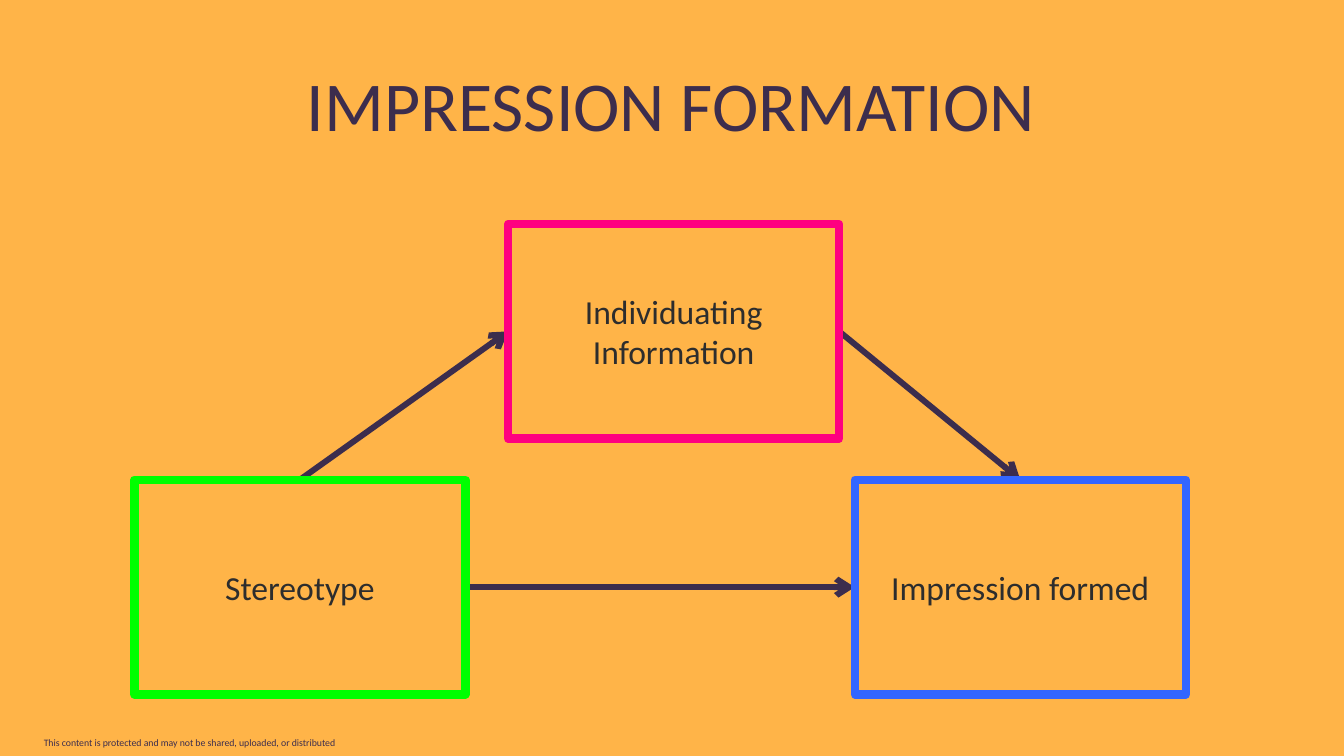
"""Build the impression formation slide: three outlined boxes joined by arrows."""
from dataclasses import dataclass

from lxml import etree
from pptx import Presentation
from pptx import util as u
from pptx.dml.color import RGBColor
from pptx.enum import shapes, text
from pptx.oxml import ns
from pptx.shapes.autoshape import Shape
from pptx.shapes.connector import Connector
from pptx.slide import Slide
from pptx.text.text import TextFrame


@dataclass(frozen=True)
class Theme:
    font: str = "Calibri"
    background: str = "FFB448"
    accent: str = "3C2D4D"
    label: str = "2D2D2D"
    title_size: float = 50
    label_size: float = 24
    notice_size: float = 7
    arrow_width: float = 4.25
    border_width: float = 6


@dataclass(frozen=True)
class Box:
    label: str
    left: float
    top: float
    border: str


@dataclass(frozen=True)
class Arrow:
    start: str
    start_site: int
    end: str
    end_site: int


THEME = Theme()
TOP, LEFT, RIGHT = 0, 1, 3
BOX_WIDTH, BOX_HEIGHT = 236.4, 153.4
LOWER_ROW = 342.7
STEREOTYPE, INFORMATION, IMPRESSION = "Stereotype", "Individuating Information", "Impression formed"
BOXES = [
    Box(STEREOTYPE, 96, LOWER_ROW, "00FF00"),
    Box(INFORMATION, 363, 160, "FF0080"),
    Box(IMPRESSION, 610.6, LOWER_ROW, "3366FF"),
]
ARROWS = [
    Arrow(INFORMATION, RIGHT, IMPRESSION, TOP),
    Arrow(STEREOTYPE, RIGHT, IMPRESSION, LEFT),
    Arrow(STEREOTYPE, TOP, INFORMATION, LEFT),
]


def write(frame: TextFrame, words: str, size: float, color: str, align: text.PP_ALIGN) -> None:
    """Put one formatted paragraph into a text frame."""
    frame.text = words
    frame.word_wrap = True
    para = frame.paragraphs[0]
    para.alignment = align
    span = para.runs[0]
    span.font.name = THEME.font
    span.font.size = u.Pt(size)
    span.font.color.rgb = RGBColor.from_string(color)


def draw_title(page: Slide) -> None:
    """Place and format the title placeholder."""
    title = page.shapes.title
    title.left, title.top, title.width, title.height = map(u.Pt, (148.3, 29.5, 662.4, 75.6))
    frame = title.text_frame
    write(frame, "IMPRESSION FORMATION", THEME.title_size, THEME.accent, text.PP_ALIGN.CENTER)
    frame.auto_size = text.MSO_AUTO_SIZE.NONE
    frame.vertical_anchor = text.MSO_ANCHOR.BOTTOM
    frame.margin_left = frame.margin_right = frame.margin_top = frame.margin_bottom = u.Pt(0)
    frame.paragraphs[0].line_spacing = 0.9


def draw_notice(page: Slide) -> None:
    """Add the small notice at the foot of the slide."""
    notice = page.shapes.add_textbox(*map(u.Pt, (24.2, 522.7, 341.3, 15.8)))
    words = "This content is protected and may not be shared, uploaded, or distributed"
    write(notice.text_frame, words, THEME.notice_size, THEME.accent, text.PP_ALIGN.LEFT)


def draw_arrow(page: Slide) -> Connector:
    """Add an arrow that is still to be joined to its boxes."""
    line = page.shapes.add_connector(shapes.MSO_CONNECTOR.STRAIGHT, *map(u.Pt, (0, 0, 0, 0)))
    line.line.color.rgb = RGBColor.from_string(THEME.accent)
    line.line.width = u.Pt(THEME.arrow_width)
    properties = line.element.spPr
    etree.SubElement(properties.find(ns.qn("a:ln")), ns.qn("a:tailEnd"), type="arrow")
    etree.SubElement(properties, ns.qn("a:effectLst"))
    return line


def draw_box(page: Slide, box: Box) -> Shape:
    """Add an outlined box with a centred label."""
    shape = page.shapes.add_shape(
        shapes.MSO_SHAPE.RECTANGLE, *map(u.Pt, (box.left, box.top, BOX_WIDTH, BOX_HEIGHT))
    )
    shape.shadow.inherit = False
    shape.fill.background()
    shape.line.color.rgb = RGBColor.from_string(box.border)
    shape.line.width = u.Pt(THEME.border_width)
    write(shape.text_frame, box.label, THEME.label_size, THEME.label, text.PP_ALIGN.CENTER)
    shape.text_frame.vertical_anchor = text.MSO_ANCHOR.MIDDLE
    return shape


def main() -> None:
    """Build and save the deck."""
    deck = Presentation()
    deck.slide_width, deck.slide_height = u.Pt(960), u.Pt(540)
    page = deck.slides.add_slide(deck.slide_layouts.get_by_name("Title Only"))
    page.background.fill.solid()
    page.background.fill.fore_color.rgb = RGBColor.from_string(THEME.background)
    draw_title(page)
    draw_notice(page)
    lines = [draw_arrow(page) for _ in ARROWS]
    drawn = {box.label: draw_box(page, box) for box in BOXES}
    for line, arrow in zip(lines, ARROWS):
        line.begin_connect(drawn[arrow.start], arrow.start_site)
        line.end_connect(drawn[arrow.end], arrow.end_site)
    deck.save("out.pptx")


if __name__ == "__main__":
    main()
